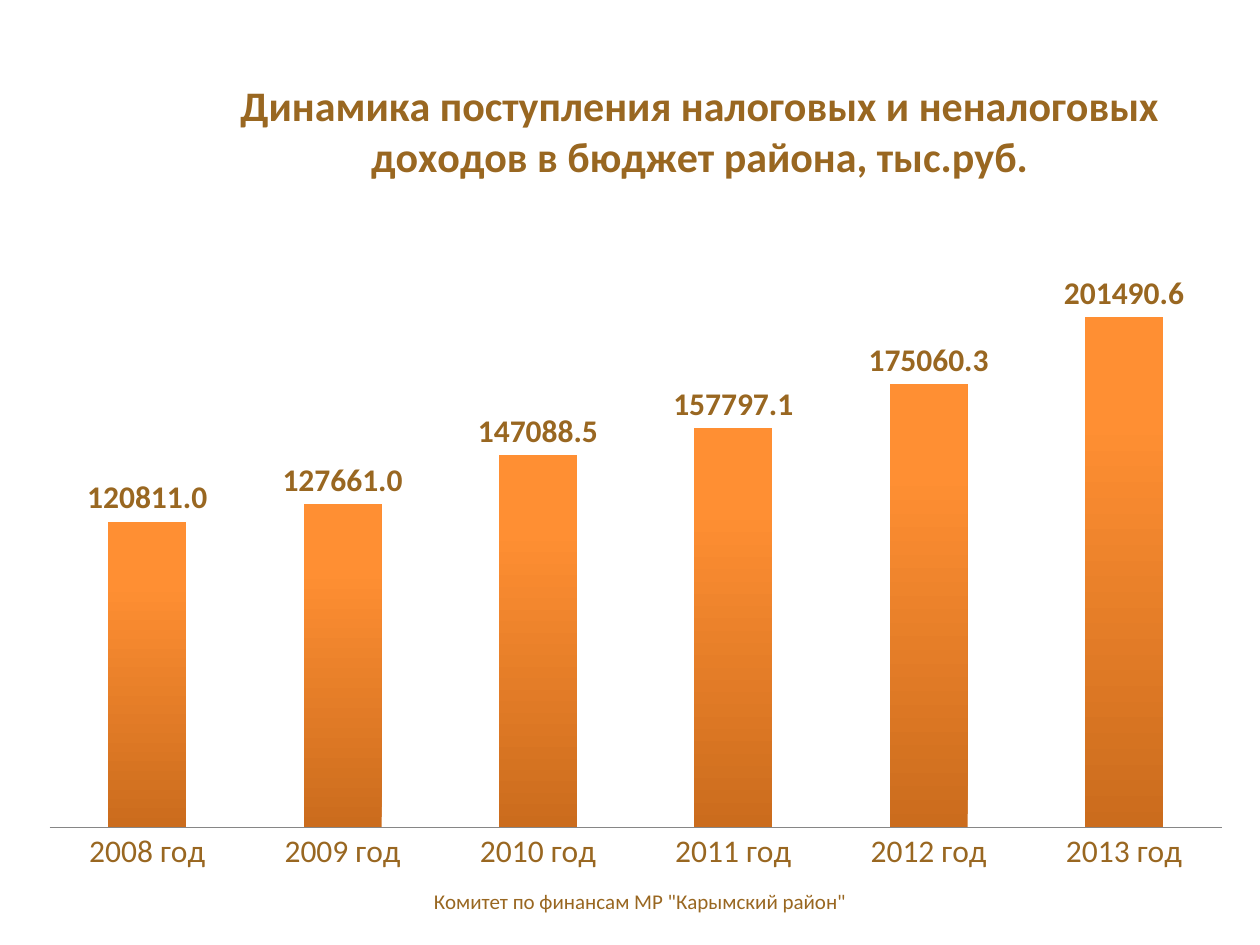
from lxml import etree
from pptx import Presentation
from pptx.chart.data import CategoryChartData
from pptx.dml.color import RGBColor
from pptx.enum.chart import XL_CHART_TYPE, XL_LABEL_POSITION, XL_TICK_MARK
from pptx.enum.text import MSO_ANCHOR, PP_ALIGN
from pptx.oxml import parse_xml
from pptx.oxml.ns import nsdecls, qn
from pptx.util import Inches, Pt

COLUMNS = XL_CHART_TYPE.COLUMN_CLUSTERED
OUTSIDE = XL_LABEL_POSITION.OUTSIDE_END
NO_TICKS = XL_TICK_MARK.NONE
BROWN = RGBColor(0x99, 0x67, 0x21)
DARK_ORANGE = RGBColor(0xCB, 0x6C, 0x1D)
ORANGE = RGBColor(0xFF, 0x8F, 0x33)
AXIS_GRAY = RGBColor(0x86, 0x86, 0x86)
FONT = "Calibri"
INCOME = [120811, 127661, 147088.5, 157797.1, 175060.3, 201490.6]


def style_font(font, size, bold=False):
    font.name = FONT
    font.size = Pt(size)
    font.bold = bold
    font.color.rgb = BROWN


def manual_layout(target=None, **fractions):
    """Layout element that places a chart part by fractions of the chart."""
    layout = parse_xml(f"<c:layout {nsdecls('c')}><c:manualLayout/></c:layout>")
    settings = {"layoutTarget": target} if target else {}
    settings.update(xMode="edge", yMode="edge", **fractions)
    for tag, value in settings.items():
        etree.SubElement(layout[0], qn(f"c:{tag}")).set("val", str(value))
    return layout


deck = Presentation()
deck.slide_width, deck.slide_height = Inches(10), Inches(7.5)
page = deck.slides.add_slide(deck.slide_layouts[6])

# Footer
footer = page.shapes.add_textbox(Inches(3.27), Inches(6.95), Inches(3.62), Inches(0.4))
frame = footer.text_frame
frame.word_wrap = True
frame.vertical_anchor = MSO_ANCHOR.MIDDLE
frame.text = 'Комитет по финансам МР "Карымский район"'
para = frame.paragraphs[0]
para.alignment = PP_ALIGN.CENTER
style_font(para.runs[0].font, 12)

# Income by year
data = CategoryChartData(number_format="0.0")
data.categories = [f"{year} год" for year in range(2008, 2014)]
data.add_series("Series 1", INCOME)
chart = page.shapes.add_chart(
    COLUMNS, Inches(0.2), Inches(0.21), Inches(9.69), Inches(6.85), data
).chart
chart.has_legend = False
style_font(chart.font, 18)

# Chart title
chart.has_title = True
title = chart.chart_title
title.include_in_layout = False
title.text_frame.text = "Динамика поступления налоговых и неналоговых доходов в бюджет района, тыс.руб."
style_font(title.text_frame.paragraphs[0].runs[0].font, 24, bold=True)
title_xml = chart._chartSpace.chart.find(qn("c:title"))
for old in title_xml.findall(qn("c:layout")):
    title_xml.remove(old)
title_xml.find(qn("c:tx")).addnext(manual_layout(x=0.17, y=0.05))

# Plot area
plot_xml = chart._chartSpace.chart.plotArea
for old in plot_xml.findall(qn("c:layout")):
    plot_xml.remove(old)
plot_xml.insert(0, manual_layout("inner", x=0.02, y=0.195, w=0.96, h=0.733))

# Axes
years = chart.category_axis
years.major_tick_mark = NO_TICKS
years.format.line.color.rgb = AXIS_GRAY
style_font(years.tick_labels.font, 18)
amounts = chart.value_axis
amounts.visible = False
amounts.has_major_gridlines = False
amounts.minimum_scale, amounts.maximum_scale = 0, 250000
amounts.tick_labels.number_format = "0.0"
amounts.tick_labels.number_format_is_linked = False

# Columns, dark at the foot and light at the top
plot = chart.plots[0]
plot.vary_by_categories = False
plot.gap_width = 150
fill = plot.series[0].format.fill
fill.gradient()
fill.gradient_angle = 90
for stop, color, position in zip(fill.gradient_stops, (DARK_ORANGE, ORANGE), (0, 0.8)):
    stop.color.rgb = color
    stop.position = position

# Value labels
labels = plot.series[0].data_labels
labels.show_value = True
labels.number_format = "0.0"
labels.number_format_is_linked = False
labels.position = OUTSIDE
style_font(labels.font, 18, bold=True)

deck.save("out.pptx")
